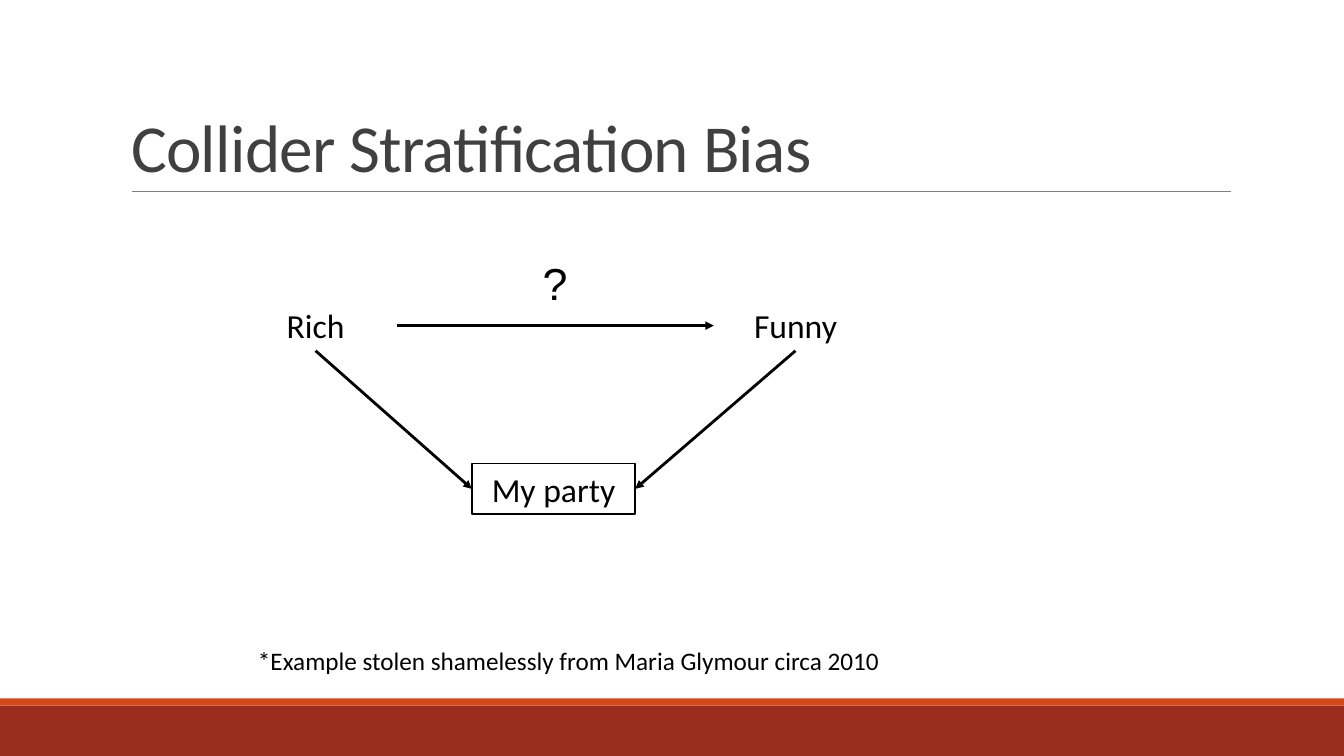
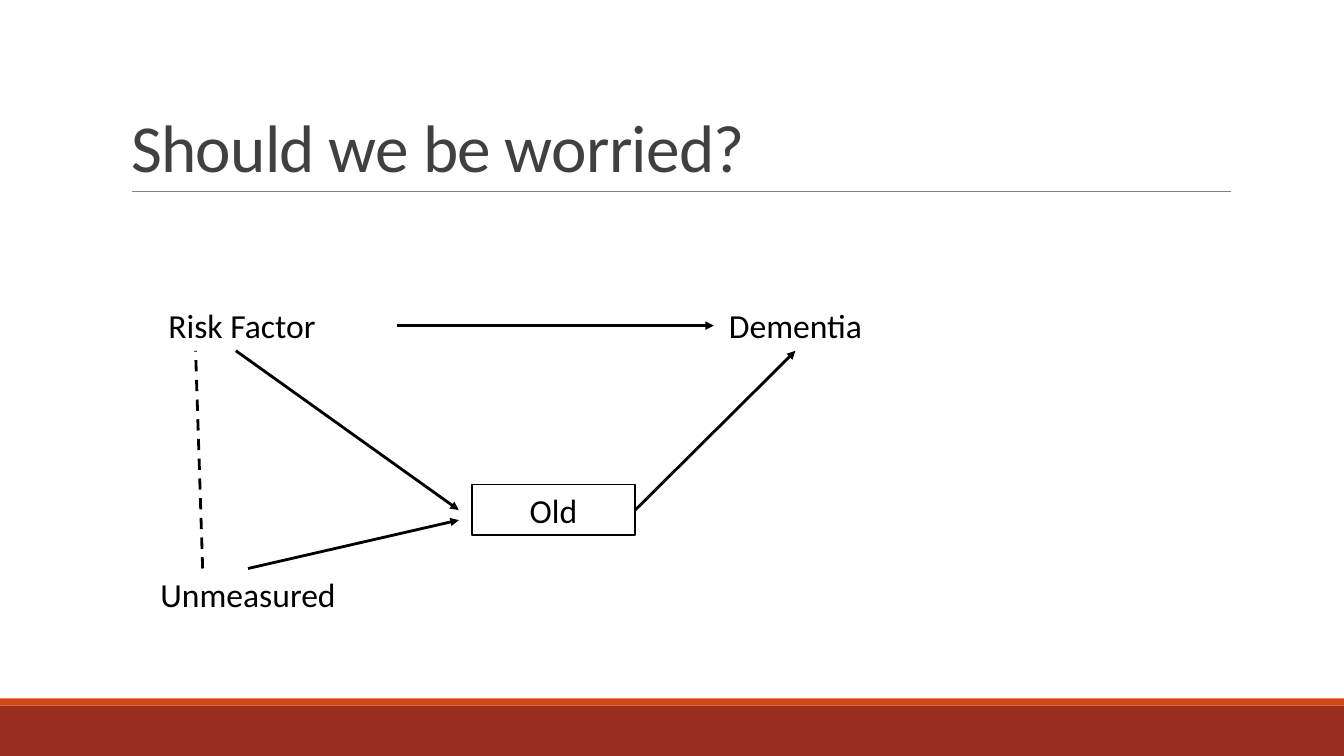
from lxml import etree
from pptx import Presentation
from pptx.dml.color import RGBColor
from pptx.enum.dml import MSO_LINE
from pptx.enum.shapes import MSO_CONNECTOR, MSO_SHAPE
from pptx.enum.text import MSO_ANCHOR, MSO_AUTO_SIZE, PP_ALIGN
from pptx.oxml.ns import qn
from pptx.util import Inches, Pt

BLACK = RGBColor(0x00, 0x00, 0x00)
TITLE_GREY = RGBColor(0x40, 0x40, 0x40)
RULE_GREY = RGBColor(0x80, 0x80, 0x80)
DARK_RED = RGBColor(0x9B, 0x2D, 0x1F)
ORANGE = RGBColor(0xD3, 0x48, 0x17)

STRAIGHT = MSO_CONNECTOR.STRAIGHT
RECTANGLE = MSO_SHAPE.RECTANGLE
DASH = MSO_LINE.DASH
CENTER, LEFT = PP_ALIGN.CENTER, PP_ALIGN.LEFT
BOTTOM = MSO_ANCHOR.BOTTOM
NO_AUTOFIT = MSO_AUTO_SIZE.NONE

# Connection sites of a rectangle
TOP_SIDE, LEFT_SIDE, BOTTOM_SIDE, RIGHT_SIDE = range(4)

SLIDE_W, SLIDE_H = 13.33, 7.5
NODE_W, NODE_H = 1.62, 0.5
WIDE_NODE_W = 3.08
CAUSE_Y = 2.98
CAUSE_RIGHT = 3.94
OUTCOME_X = 7.08
COLLIDER_X = 4.68


def add_band(slide, y, h, color):
    sp = slide.shapes.add_shape(RECTANGLE, 0, Inches(y), Inches(SLIDE_W), Inches(h))
    sp.shadow.inherit = False
    sp.fill.solid()
    sp.fill.fore_color.rgb = color
    sp.line.fill.background()
    return sp


def add_line(slide, start, end, color=BLACK, width=2, arrow=True, dash=None):
    """Draw a line; each end is an (x, y) point or a (shape, site) pair."""
    points = [(0, 0) if hasattr(e[0], "shape_id") else e for e in (start, end)]
    line = slide.shapes.add_connector(
        STRAIGHT, *(Inches(v) for point in points for v in point))
    for e, connect in ((start, line.begin_connect), (end, line.end_connect)):
        if hasattr(e[0], "shape_id"):
            connect(*e)
    line.line.color.rgb = color
    line.line.width = Pt(width)
    if dash:
        line.line.dash_style = dash
    sp_pr = line.element.spPr
    if arrow:
        etree.SubElement(sp_pr.find(qn("a:ln")), qn("a:tailEnd"), type="triangle")
    etree.SubElement(sp_pr, qn("a:effectLst"))
    return line


def add_label(slide, text, x, y, w=NODE_W, h=NODE_H, size=24, font="Calibri",
              align=CENTER, boxed=False):
    sp = slide.shapes.add_textbox(Inches(x), Inches(y), Inches(w), Inches(h))
    if boxed:
        sp.line.color.rgb = BLACK
        sp.line.width = Pt(1)
    tf = sp.text_frame
    tf.word_wrap = True
    tf.text = text
    p = tf.paragraphs[0]
    p.alignment = align
    p.font.name = font
    p.font.size = Pt(size)
    p.font.color.rgb = BLACK
    return sp


def set_up_layout(prs, slide):
    """Give the layout its title place, bands and rule, drawn by way of a slide."""
    layout = slide.slide_layout
    for ph in list(layout.placeholders)[1:]:
        ph.element.getparent().remove(ph.element)
    title = layout.placeholders[0]
    title.left, title.top = Inches(1.2), Inches(0.31)
    title.width, title.height = Inches(11), Inches(1.59)
    shared = (
        add_band(slide, 7, 0.5, DARK_RED),
        add_band(slide, 6.93, 0.07, ORANGE),
        add_line(slide, (1.31, 1.9), (12.21, 1.9), RULE_GREY, 0.5, arrow=False),
    )
    for sp in shared:
        layout.shapes.element.append(sp.element)


def set_title(slide, text):
    tf = slide.shapes.title.text_frame
    tf.text = text
    tf.auto_size = NO_AUTOFIT
    tf.vertical_anchor = BOTTOM
    p = tf.paragraphs[0]
    p.alignment = LEFT
    p.line_spacing = 0.85
    p.font.name = "Calibri"
    p.font.size = Pt(48)
    p.font.color.rgb = TITLE_GREY
    p.runs[0].font.bold = False
    p.runs[0].font.element.set("spc", "-50") if hasattr(p.runs[0].font, "element") \
        else p.runs[0]._r.get_or_add_rPr().set("spc", "-50")


def build_party_slide(slide):
    set_title(slide, "Collider Stratification Bias")
    rich = add_label(slide, "Rich", CAUSE_RIGHT - NODE_W, CAUSE_Y)
    funny = add_label(slide, "Funny", OUTCOME_X, CAUSE_Y)
    party = add_label(slide, "My party", COLLIDER_X, 4.6, boxed=True)
    add_line(slide, (funny, BOTTOM_SIDE), (party, RIGHT_SIDE))
    add_line(slide, (rich, BOTTOM_SIDE), (party, LEFT_SIDE))
    add_line(slide, (rich, RIGHT_SIDE), (funny, LEFT_SIDE))
    add_label(slide, "?", 5.12, 2.49, 0.77, 0.64, size=32, font="Arial")
    add_label(slide, "*Example stolen shamelessly from Maria Glymour circa 2010",
              2.46, 6.35, 8.17, 0.4, size=18, align=LEFT)


def build_dementia_slide(slide):
    set_title(slide, "Should we be worried?")
    risk = add_label(slide, "Risk Factor", CAUSE_RIGHT - WIDE_NODE_W, CAUSE_Y, WIDE_NODE_W)
    dementia = add_label(slide, "Dementia", OUTCOME_X, CAUSE_Y)
    old = add_label(slide, "Old", COLLIDER_X, 4.81, boxed=True)
    unmeasured = add_label(slide, "Unmeasured", 0.92, 5.64, WIDE_NODE_W)
    add_line(slide, (old, RIGHT_SIDE), (dementia, BOTTOM_SIDE))
    add_line(slide, (unmeasured, TOP_SIDE), (4.55, 5.16))
    add_line(slide, (risk, RIGHT_SIDE), (dementia, LEFT_SIDE))
    add_line(slide, (2.34, 3.48), (4.55, 5.06))
    add_line(slide, (2.01, 5.64), (1.94, 3.48), arrow=False, dash=DASH)


def main():
    prs = Presentation()
    prs.slide_width, prs.slide_height = Inches(SLIDE_W), Inches(SLIDE_H)
    title_only = prs.slide_layouts[5]
    party_slide = prs.slides.add_slide(title_only)
    set_up_layout(prs, party_slide)
    build_party_slide(party_slide)
    build_dementia_slide(prs.slides.add_slide(title_only))
    prs.save("out.pptx")


if __name__ == "__main__":
    main()
